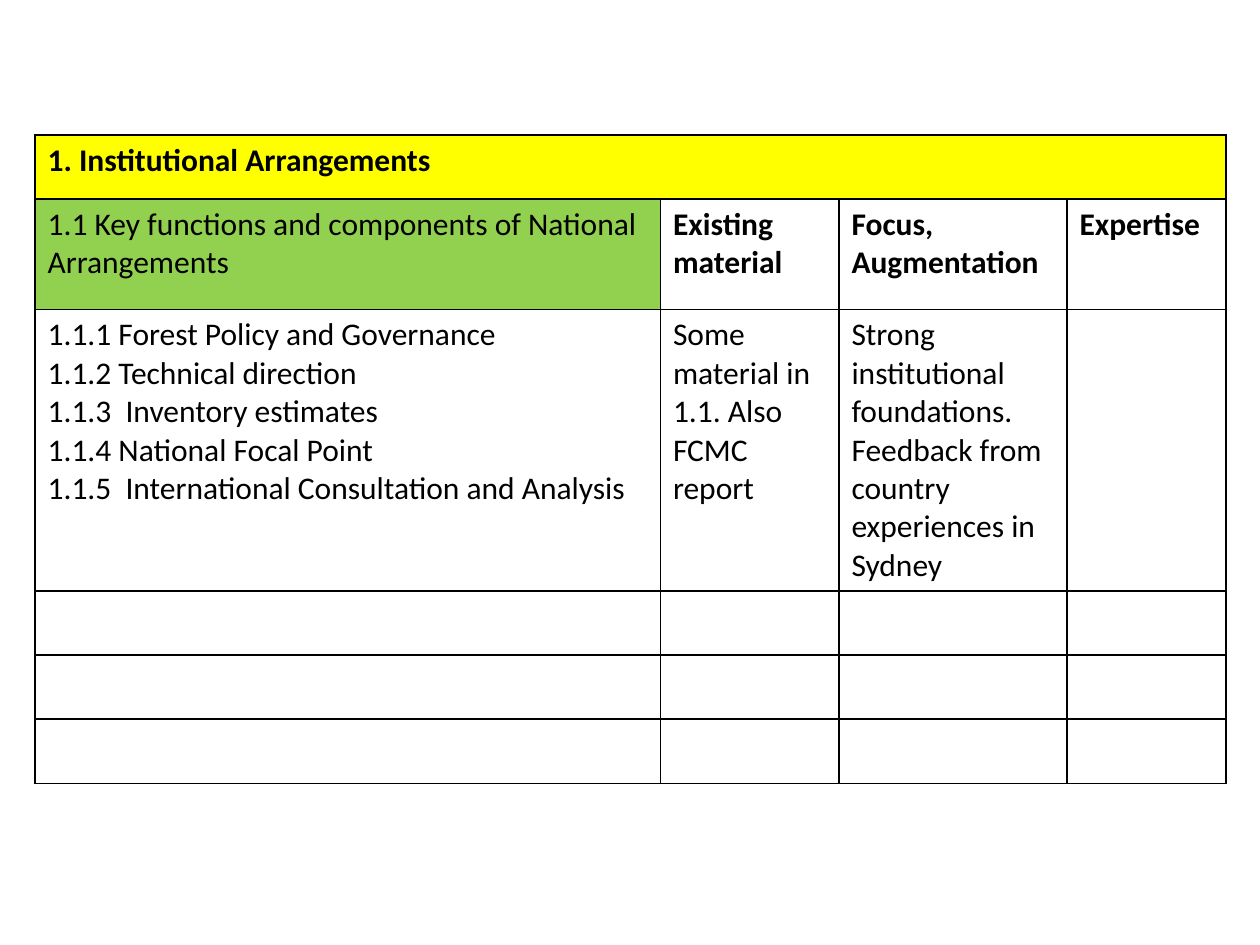
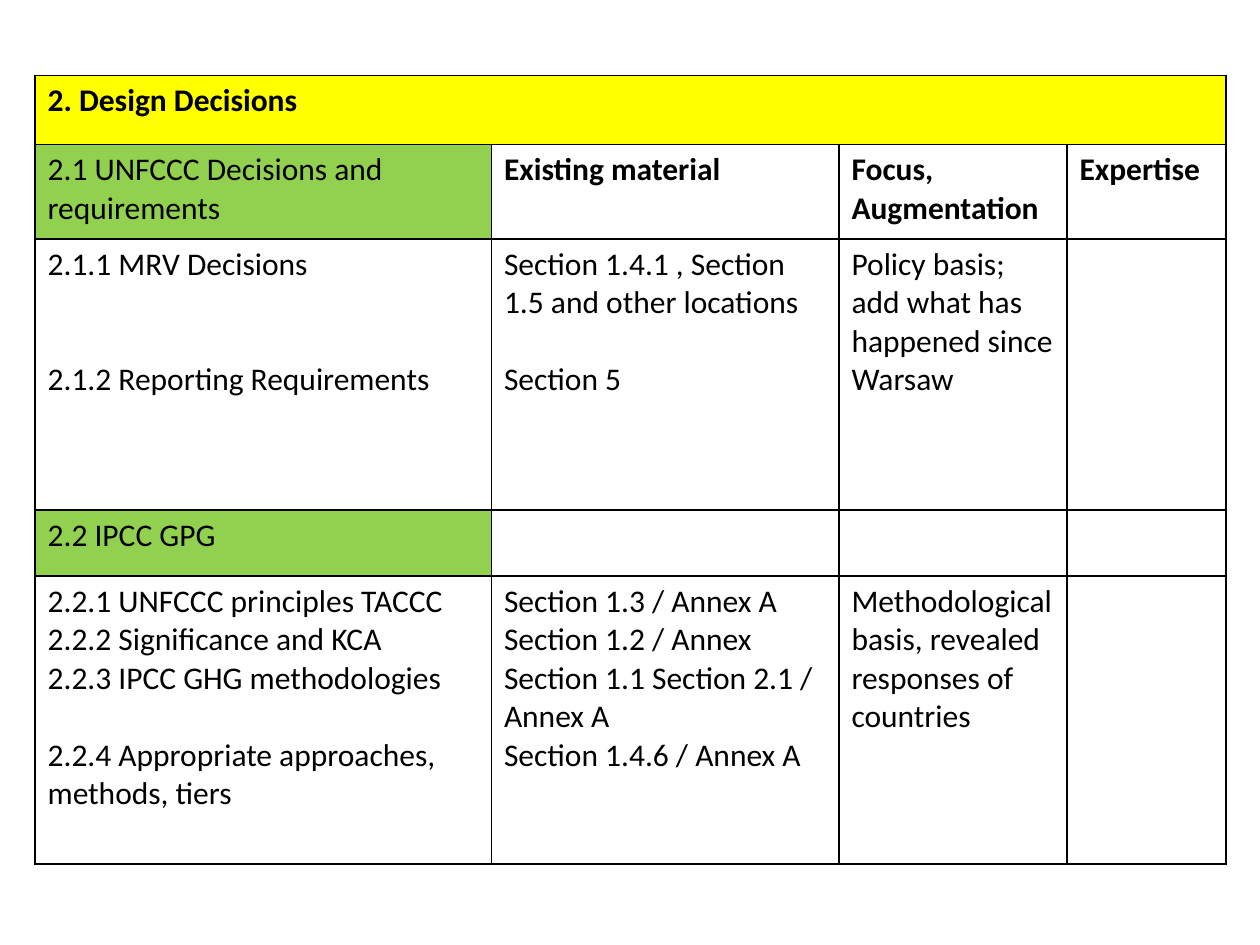
from dataclasses import dataclass, field
from typing import NamedTuple

from lxml import etree
from pptx import Presentation
from pptx import util as u
from pptx.dml import color
from pptx.oxml import ns


# Theme shared by every slide
@dataclass(frozen=True)
class Theme:
    font: str = "Calibri"
    size: u.Length = u.Pt(18)
    line_height: float = 22
    ink: str = "000000"
    section: str = "FFFF00"
    topic: str = "92D050"
    plain: str = "FFFFFF"
    border: u.Length = u.Pt(1)


THEME = Theme()
SLIDE_WIDTH, SLIDE_HEIGHT = u.Pt(720), u.Pt(540)
LEFT = 20
TOPIC_AND_MATERIAL_WIDTH = 459.4
FOCUS_WIDTH, EXPERTISE_WIDTH = 130.3, 90.9


class Line(NamedTuple):
    text: str
    gap: int = 0  # free lines above


@dataclass(frozen=True)
class Entry:
    lines: list[Line] = field(default_factory=list)
    fill: str = THEME.plain
    bold: bool = False


@dataclass(frozen=True)
class Row:
    height: float
    entries: list[Entry]


@dataclass(frozen=True)
class Plan:
    top: float
    topic_width: float
    rows: list[Row]


# Kinds of entry and row
def entry(*lines: str | Line, fill: str = THEME.plain, bold: bool = False) -> Entry:
    return Entry([Line(l) if isinstance(l, str) else l for l in lines], fill, bold)


def section_row(height: float, title: str) -> Row:
    return Row(height, [entry(title, fill=THEME.section, bold=True)])


def heading_row(height: float, topic: str) -> Row:
    headings = [("Existing material",), ("Focus,", "Augmentation"), ("Expertise",)]
    return Row(height, [entry(topic, fill=THEME.topic),
                        *(entry(*heading, bold=True) for heading in headings)])


EMPTY = Entry()

PLANS = [
    Plan(77.1, 357.4, [
        section_row(36.6, "1. Institutional Arrangements"),
        heading_row(63.1, "1.1 Key functions and components of National Arrangements"),
        Row(161, [
            entry("1.1.1 Forest Policy and Governance",
                  "1.1.2 Technical direction",
                  "1.1.3  Inventory estimates",
                  "1.1.4 National Focal Point",
                  "1.1.5  International Consultation and Analysis"),
            entry("Some material in 1.1. Also FCMC report"),
            entry("Strong institutional foundations. Feedback from country "
                  "experiences in Sydney"),
            EMPTY]),
        *[Row(36.6, [EMPTY] * 4)] * 3,
    ]),
    Plan(43.1, 260.8, [
        section_row(39.4, "2. Design Decisions"),
        heading_row(54, "2.1 UNFCCC Decisions and requirements"),
        Row(155.1, [
            entry("2.1.1 MRV Decisions", Line("2.1.2 Reporting Requirements", gap=2)),
            entry("Section 1.4.1 , Section 1.5 and other locations",
                  Line("Section 5", gap=1)),
            entry("Policy basis; add what has happened since Warsaw"),
            EMPTY]),
        Row(37.7, [entry("2.2 IPCC GPG", fill=THEME.topic), EMPTY, EMPTY, EMPTY]),
        Row(164.6, [
            entry("2.2.1 UNFCCC principles TACCC",
                  "2.2.2 Significance and KCA",
                  "2.2.3 IPCC GHG methodologies",
                  Line("2.2.4 Appropriate approaches, methods, tiers", gap=1)),
            entry("Section 1.3 / Annex A Section 1.2 / Annex "
                  "Section 1.1 Section 2.1 / Annex A",
                  "Section 1.4.6 / Annex A"),
            entry("Methodological basis, revealed responses of countries"),
            EMPTY]),
    ]),
]


# Drawing
def draw_borders(cell) -> None:
    properties = cell._tc.get_or_add_tcPr()
    for side in ("a:lnL", "a:lnR", "a:lnT", "a:lnB"):
        line = etree.SubElement(properties, ns.qn(side), w=str(THEME.border))
        solid = etree.SubElement(line, ns.qn("a:solidFill"))
        etree.SubElement(solid, ns.qn("a:srgbClr"), val=THEME.ink)


def fill_cell(cell, content: Entry) -> None:
    draw_borders(cell)
    cell.fill.solid()
    cell.fill.fore_color.rgb = color.RGBColor.from_string(content.fill)
    frame = cell.text_frame
    for i, line in enumerate(content.lines or [Line("")]):
        paragraph = frame.add_paragraph() if i else frame.paragraphs[0]
        paragraph.text = line.text
        if line.gap:
            paragraph.space_before = u.Pt(line.gap * THEME.line_height)
        font = paragraph.font
        font.name, font.size, font.bold = THEME.font, THEME.size, content.bold
        font.color.rgb = color.RGBColor.from_string(THEME.ink)


def draw_plan(slide, plan: Plan) -> None:
    widths = [plan.topic_width, TOPIC_AND_MATERIAL_WIDTH - plan.topic_width,
              FOCUS_WIDTH, EXPERTISE_WIDTH]
    table = slide.shapes.add_table(
        len(plan.rows), len(widths), u.Pt(LEFT), u.Pt(plan.top),
        u.Pt(sum(widths)), u.Pt(sum(row.height for row in plan.rows))).table
    table.first_row = table.horz_banding = False
    for column, width in zip(table.columns, widths):
        column.width = u.Pt(width)
    for r, row in enumerate(plan.rows):
        table.rows[r].height = u.Pt(row.height)
        if len(row.entries) == 1:
            table.cell(r, 0).merge(table.cell(r, len(widths) - 1))
        for c in range(len(widths)):
            content = row.entries[c] if c < len(row.entries) else EMPTY
            fill_cell(table.cell(r, c), content)


def main() -> None:
    deck = Presentation()
    deck.slide_width, deck.slide_height = SLIDE_WIDTH, SLIDE_HEIGHT
    for plan in PLANS:
        draw_plan(deck.slides.add_slide(deck.slide_layouts[6]), plan)
    deck.save("out.pptx")


if __name__ == "__main__":
    main()
